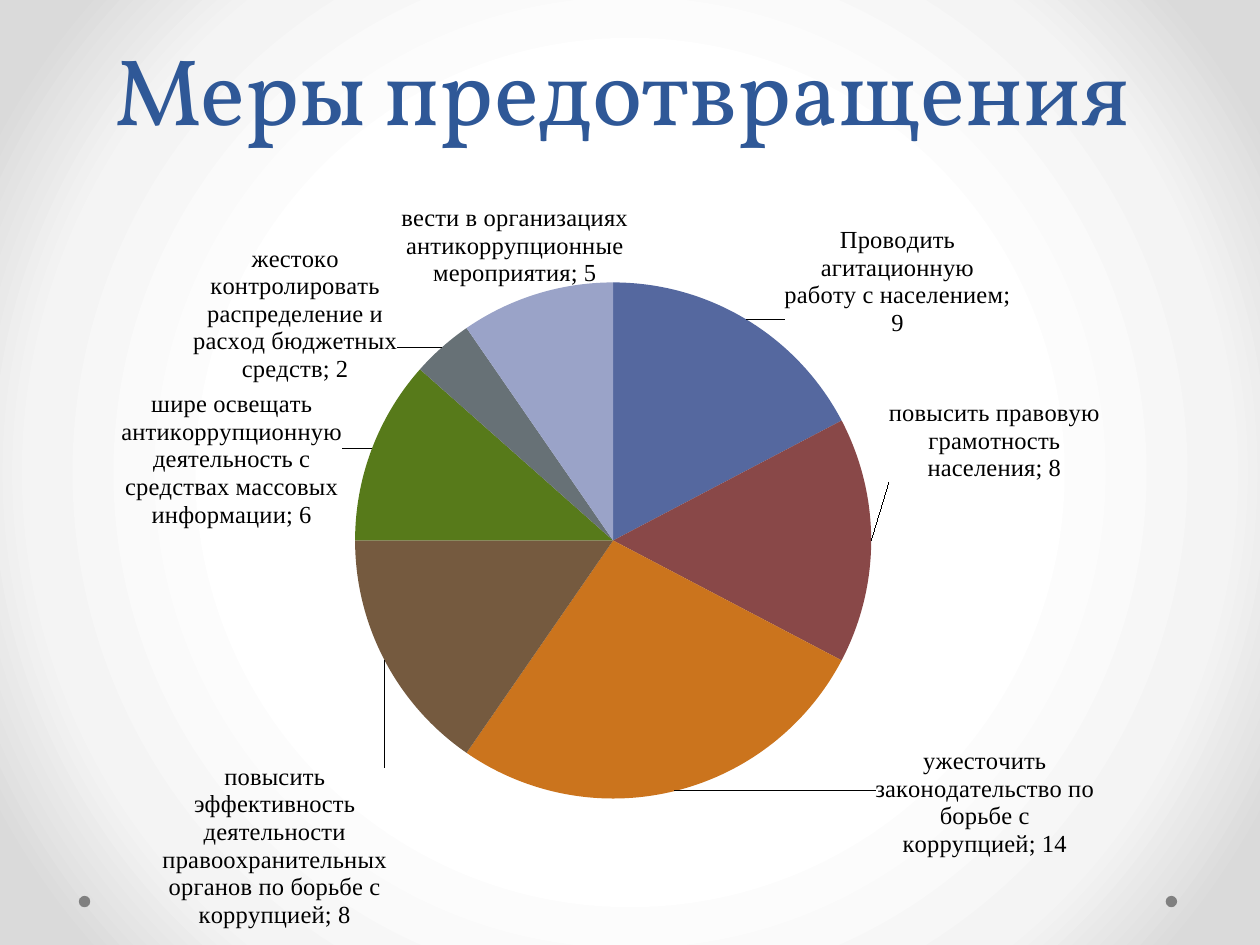
import dataclasses

import pptx
import pptx.chart.data
import pptx.dml.color
import pptx.enum.chart
import pptx.enum.shapes
import pptx.enum.text
import pptx.oxml
import pptx.oxml.ns
import pptx.util
from pptx.util import Cm, Pt


@dataclasses.dataclass(frozen=True)
class Theme:
    """Colours, fonts and type sizes of the slide."""
    title: str = "2F5897"
    text: str = "000000"
    dot: str = "808080"
    glow: tuple = ((50, "FFFFFF"), (76, "F4F4F4"), (92, "DADADA"))
    title_font: str = "Vollkorn"
    label_font: str = "Times New Roman"
    title_size: int = 54
    title_leading: int = 58
    chart_size: int = 10
    label_size: int = 14


THEME = Theme()

MEASURES = [
    ("Проводить агитационную работу с населением", 9, "55689F", (0.03, 0.03)),
    ("повысить правовую грамотность населения", 8, "894848", (0.009, -0.129)),
    ("ужесточить законодательство по борьбе с коррупцией", 14, "CB741D", (0.175, -0.066)),
    ("повысить эффективность деятельности правоохранительных органов по борьбе с коррупцией",
     8, "755A3F", (0.008, 0.134)),
    ("шире освещать антикоррупционную деятельность с средствах массовых информации",
     6, "577A1A", (-0.02, 0.106)),
    ("жестоко контролировать распределение и расход бюджетных средств",
     2, "677176", (-0.035, 0.053)),
    ("вести в организациях антикоррупционные мероприятия", 5, "9AA3C8", (0.083, 0)),
]


def rgb(value):
    """Turn a hex string into a colour."""
    return pptx.dml.color.RGBColor.from_string(value)


def set_font(font, name, size, colour):
    """Set name, size and colour of a font."""
    font.name = name
    font.size = Pt(size)
    font.color.rgb = rgb(colour)


def manual_layout(**settings):
    """Build a manual chart layout element."""
    parts = "".join(f'<c:{key} val="{value}"/>' for key, value in settings.items())
    return pptx.oxml.parse_xml(
        f'<c:layout {pptx.oxml.ns.nsdecls("c")}><c:manualLayout>{parts}'
        '</c:manualLayout></c:layout>')


def set_background(page):
    """Give the page a round gradient."""
    stops = "".join(
        f'<a:gs pos="{place * 1000}"><a:srgbClr val="{colour}"/></a:gs>'
        for place, colour in THEME.glow)
    background = pptx.oxml.parse_xml(
        f'<p:bg {pptx.oxml.ns.nsdecls("p", "a")}><p:bgPr><a:gradFill rotWithShape="1">'
        f'<a:gsLst>{stops}</a:gsLst><a:path path="circle">'
        '<a:fillToRect l="50000" t="50000" r="50000" b="50000"/></a:path>'
        '</a:gradFill><a:effectLst/></p:bgPr></p:bg>')
    page.element.cSld.insert(0, background)


def add_dot(page, left):
    """Add a small grey dot near the foot of the page."""
    dot = page.shapes.add_shape(
        pptx.enum.shapes.MSO_SHAPE.OVAL, left, Cm(18.06), Cm(0.23), Cm(0.23))
    dot.shadow.inherit = False
    dot.fill.solid()
    dot.fill.fore_color.rgb = rgb(THEME.dot)
    dot.line.fill.background()


def set_title(page, text):
    """Place and format the title."""
    box = page.shapes.title
    box.left, box.top, box.width, box.height = Cm(1.3), Cm(1.3), Cm(22.86), Cm(1.73)
    frame = box.text_frame
    frame.text = text
    frame.vertical_anchor = pptx.enum.text.MSO_ANCHOR.BOTTOM
    frame.auto_size = pptx.enum.text.MSO_AUTO_SIZE.NONE
    para = frame.paragraphs[0]
    para.alignment = pptx.enum.text.PP_ALIGN.CENTER
    para.line_spacing = Pt(THEME.title_leading)
    set_font(para.font, THEME.title_font, THEME.title_size, THEME.title)


def format_label(series, index, shift):
    """Show category and value beside a slice, moved by a share of the chart."""
    label = series.points[index].data_label
    label.position = pptx.enum.chart.XL_LABEL_POSITION.BEST_FIT
    set_font(label.font, THEME.label_font, THEME.label_size, THEME.text)
    element = series._element.xpath(f"c:dLbls/c:dLbl[c:idx/@val={index}]")[0]
    element.insert(1, manual_layout(x=shift[0], y=shift[1]))
    element.find(pptx.oxml.ns.qn("c:showCatName")).set("val", "1")
    element.append(pptx.oxml.parse_xml(
        f'<c:separator {pptx.oxml.ns.nsdecls("c")}>; </c:separator>'))


def add_pie(page):
    """Add the pie chart of measures."""
    data = pptx.chart.data.CategoryChartData()
    data.categories = [name for name, *_ in MEASURES]
    data.add_series("Series 1", [value for _, value, *_ in MEASURES])
    chart = page.shapes.add_chart(
        pptx.enum.chart.XL_CHART_TYPE.PIE,
        Cm(1.02), Cm(3.12), Cm(22.89), Cm(15.6), data).chart
    chart.has_title = False
    chart.has_legend = False
    set_font(chart.font, THEME.title_font, THEME.chart_size, THEME.text)
    plot = chart.plots[0]
    plot.vary_by_categories = True
    area = plot._element.getparent()
    for old in area.findall(pptx.oxml.ns.qn("c:layout")):
        area.remove(old)
    area.insert(0, manual_layout(layoutTarget="inner", xMode="edge", yMode="edge",
                                 x=0.268, y=0.165, w=0.455, h=0.667))
    series = plot.series[0]
    labels = series.data_labels
    labels.show_category_name = True
    labels.show_value = True
    set_font(labels.font, THEME.label_font, THEME.label_size, THEME.text)
    for index, (_, _, colour, shift) in enumerate(MEASURES):
        look = series.points[index].format
        look.fill.solid()
        look.fill.fore_color.rgb = rgb(colour)
        look.line.fill.background()
        format_label(series, index, shift)


def main():
    """Build and save the deck."""
    deck = pptx.Presentation()
    deck.slide_width, deck.slide_height = Cm(25.4), Cm(19.05)
    page = deck.slides.add_slide(deck.slide_layouts[5])
    set_background(page)
    for left in (Cm(23.5), Cm(1.59)):
        add_dot(page, left)
    set_title(page, "Меры предотвращения ")
    add_pie(page)
    deck.save("out.pptx")


if __name__ == "__main__":
    main()
